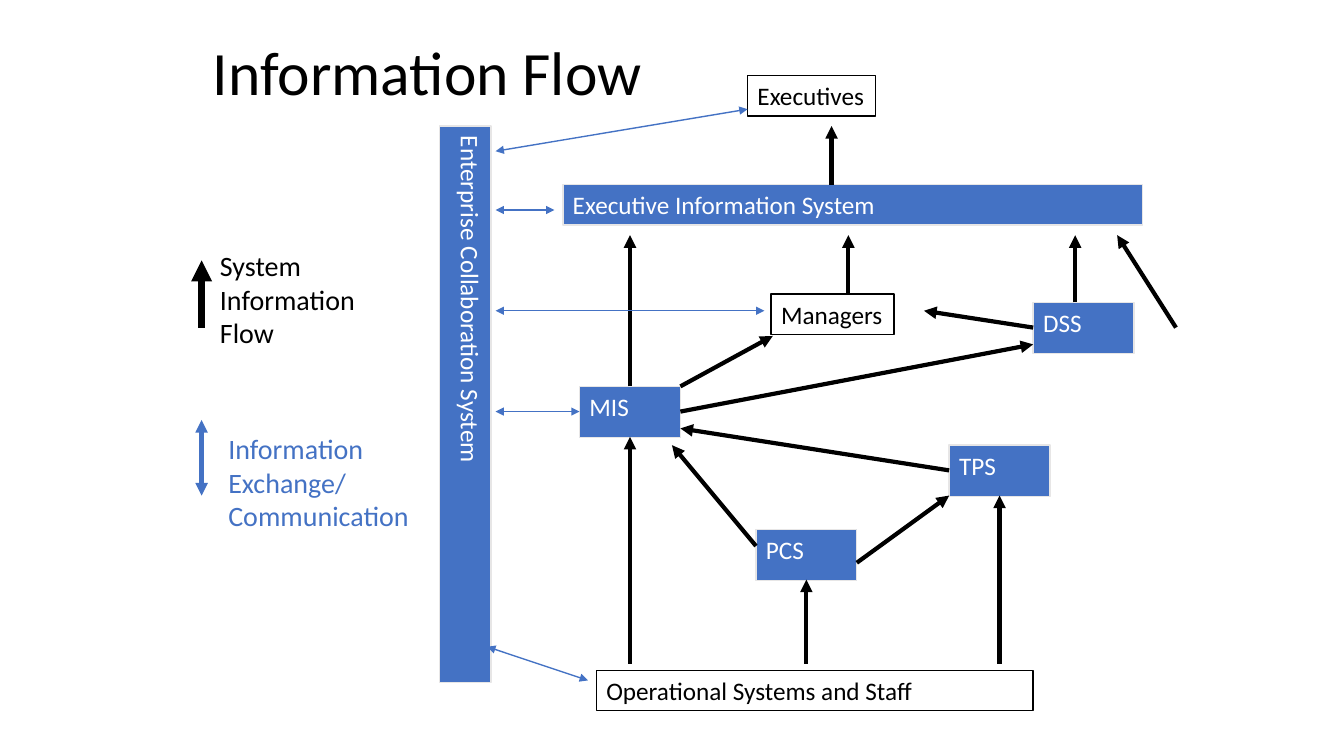
from lxml import etree
from pptx import Presentation
from pptx.dml.color import RGBColor
from pptx.enum.shapes import MSO_CONNECTOR, MSO_SHAPE
from pptx.enum.text import MSO_ANCHOR, PP_ALIGN
from pptx.oxml.ns import qn
from pptx.util import Pt

RECTANGLE = MSO_SHAPE.RECTANGLE
STRAIGHT = MSO_CONNECTOR.STRAIGHT
LEFT = PP_ALIGN.LEFT
TOP, MIDDLE = MSO_ANCHOR.TOP, MSO_ANCHOR.MIDDLE

BLACK, WHITE, BLUE, PALE = "000000", "FFFFFF", "4472C4", "E7E6E6"
FONT = "Calibri"
ROW_HEIGHT = 28.8
SYSTEM_WIDTH, SYSTEM_HEIGHT = 72, 36.7

# Positions are relative to the region: left, top, width
PEOPLE = [
    ("Executives", 132, 0, 91.4, False),
    ("Managers", 148.8, 156, 87.8, False),
    ("Operational Systems and Staff", 24, 424.8, 312, True),
]
SYSTEMS = [("MIS", 12, 222), ("TPS", 276, 264), ("PCS", 138, 324), ("DSS", 336, 162)]
# Start x, start y, end x, end y
INFORMATION_FLOWS = [
    (48, 222, 48, 114), (366, 162, 366, 114), (192, 78, 192, 36),
    (48, 420, 48, 258), (138, 336, 78, 264), (276, 282, 84, 252),
    (312, 420, 312, 300), (174, 420, 174, 360), (210, 348, 276, 300),
    (84, 240, 336, 192), (84, 222, 150, 186), (204, 156, 204, 114),
    (336, 180, 258, 168), (438, 180, 396, 114),
]
EXCHANGES = [
    (40, 18, 220, -12), (40, 60, 82, 60), (40, 132, 232, 132),
    (40, 204, 100, 204), (34, 372, 106, 396),
]


def color(hex_code):
    return RGBColor.from_string(hex_code)


def write(frame, text, size, hex_code, wrap=True, anchor=TOP):
    frame.text = text
    frame.word_wrap = wrap
    frame.vertical_anchor = anchor
    para = frame.paragraphs[0]
    para.alignment = LEFT
    para.font.name = FONT
    para.font.size = Pt(size)
    para.font.color.rgb = color(hex_code)
    return para


def add_box(page, text, left, top, width, height, filled=True, wrap=True):
    """Add a blue system box, or an outlined one for people."""
    box = page.shapes.add_shape(RECTANGLE, Pt(left), Pt(top), Pt(width), Pt(height))
    box.shadow.inherit = False
    if filled:
        box.fill.solid()
        box.fill.fore_color.rgb = color(BLUE)
    else:
        box.fill.background()
    box.line.color.rgb = color(PALE if filled else BLACK)
    box.line.width = Pt(1)
    write(box.text_frame, text, 18, WHITE if filled else BLACK, wrap)
    return box


def add_arrow(page, origin, ends, hex_code, width, two_way=False):
    left, top = origin
    x1, y1, x2, y2 = ends
    arrow = page.shapes.add_connector(
        STRAIGHT, Pt(left + x1), Pt(top + y1), Pt(left + x2), Pt(top + y2))
    arrow.line.color.rgb = color(hex_code)
    arrow.line.width = Pt(width)
    outline = arrow.line._get_or_add_ln()
    for tag in ("a:headEnd", "a:tailEnd") if two_way else ("a:tailEnd",):
        etree.SubElement(outline, qn(tag)).set("type", "triangle")
    etree.SubElement(arrow._element.spPr, qn("a:effectLst"))


def add_title(page, left, top, width, height):
    title = page.shapes.title
    title.left, title.top = Pt(left), Pt(top)
    title.width, title.height = Pt(width), Pt(height)
    para = write(title.text_frame, "Information Flow", 44, BLACK, anchor=MIDDLE)
    para.line_spacing = 0.9


def add_hierarchy(page, left, top, width):
    add_box(page, "Executive Information System", left, top + 78, width, ROW_HEIGHT)
    for name, x, y, box_width, wrap in PEOPLE:
        add_box(page, name, left + x, top + y, box_width, ROW_HEIGHT, False, wrap)
    for name, x, y in SYSTEMS:
        add_box(page, name, left + x, top + y, SYSTEM_WIDTH, SYSTEM_HEIGHT)
    for ends in INFORMATION_FLOWS:
        add_arrow(page, (left, top), ends, BLACK, 3)


def add_collaboration(page, left, top, width, height):
    bar = add_box(page, "Enterprise Collaboration System", left, top, width, height)
    bar.text_frame._txBody.bodyPr.set("vert", "eaVert")
    for ends in EXCHANGES:
        add_arrow(page, (left, top), ends, BLUE, 1, two_way=True)


def add_legend(page, left, top):
    entries = [
        ("System\vInformation\vFlow", BLACK, 6, 0, 111.6, False, (0, 60, 0, 12), 5),
        ("Information\vExchange/\vCommunication", BLUE, 12, 130.6, 149.8, True,
         (0, 126, 0, 180), 3),
    ]
    for text, hex_code, x, y, width, two_way, ends, weight in entries:
        add_arrow(page, (left, top), ends, hex_code, weight, two_way)
        label = page.shapes.add_textbox(Pt(left + x), Pt(top + y), Pt(width), Pt(79.5))
        write(label.text_frame, text, 20, hex_code, wrap=two_way)


def main():
    deck = Presentation()
    deck.slide_width, deck.slide_height = Pt(960), Pt(540)
    page = deck.slides.add_slide(deck.slide_layouts.get_by_name("Title Only"))
    add_title(page, 144.7, 23.8, 359.3, 59.8)
    add_hierarchy(page, 402, 54, 414)
    add_collaboration(page, 314, 90, 36.7, 397.4)
    add_legend(page, 144, 174)
    deck.save("out.pptx")


if __name__ == "__main__":
    main()
